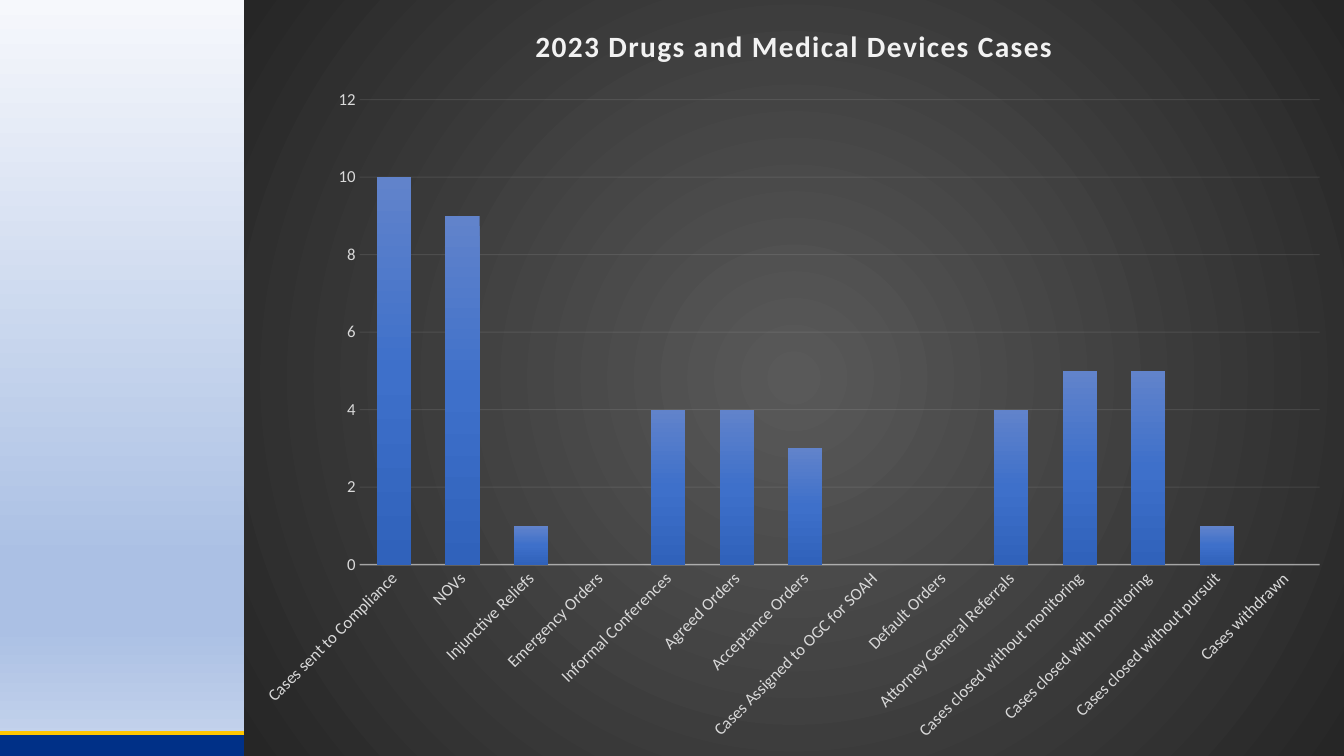
from lxml import etree
from pptx import Presentation
from pptx.chart.data import CategoryChartData
from pptx.dml.color import RGBColor
from pptx.enum import chart as charts, shapes
from pptx.oxml import ns, parse_xml
from pptx.util import Inches, Pt

CASES = {
    "Cases sent to Compliance": 10,
    "NOVs": 9,
    "Injunctive Reliefs": 1,
    "Emergency Orders": 0,
    "Informal Conferences": 4,
    "Agreed Orders": 4,
    "Acceptance Orders": 3,
    "Cases Assigned to OGC for SOAH": 0,
    "Default Orders": 0,
    "Attorney General Referrals": 4,
    "Cases closed without monitoring": 5,
    "Cases closed with monitoring": 5,
    "Cases closed without pursuit": 1,
    "Cases withdrawn": 0,
}
LINEAR = '<a:lin ang="5400000" scaled="0"/>'
RADIAL = ('<a:path path="circle">'
          '<a:fillToRect l="50000" t="50000" r="50000" b="50000"/></a:path>')


def color(value):
    return RGBColor.from_string(value)


def gradient(stops, direction=LINEAR):
    stop_xml = "".join(
        f'<a:gs pos="{position * 1000}"><a:srgbClr val="{value}"/></a:gs>'
        for position, value in stops)
    return parse_xml(f'<a:gradFill {ns.nsdecls("a")} rotWithShape="1">'
                     f'<a:gsLst>{stop_xml}</a:gsLst>{direction}</a:gradFill>')


class SlideBuilder:
    font_name = "Calibri"
    title_color = "F2F2F2"
    label_color = "D9D9D9"

    def __init__(self, slide):
        self.slide = slide

    def background(self, stops):
        self.slide.background.fill.gradient()
        old_fill = self.slide.element.find(".//" + ns.qn("a:gradFill"))
        old_fill.getparent().replace(old_fill, gradient(stops))

    def band(self, left, top, width, height, fill):
        shape = self.slide.shapes.add_shape(
            shapes.MSO_SHAPE.RECTANGLE,
            Inches(left), Inches(top), Inches(width), Inches(height))
        shape.shadow.inherit = False
        shape.fill.solid()
        shape.fill.fore_color.rgb = color(fill)
        shape.line.fill.background()

    def rule(self, left, top, width, line_color, weight):
        connector = self.slide.shapes.add_connector(
            shapes.MSO_CONNECTOR.STRAIGHT,
            Inches(left), Inches(top), Inches(left + width), Inches(top))
        connector.line.color.rgb = color(line_color)
        connector.line.width = Pt(weight)
        etree.SubElement(connector.element.spPr, ns.qn("a:effectLst"))

    def style_font(self, font, size, font_color):
        font.name = self.font_name
        font.size = Pt(size)
        font.color.rgb = color(font_color)

    def style_line(self, line, weight, opacity):
        line.width = Pt(weight)
        line.color.rgb = color(self.title_color)
        swatch = line.fill._xPr.find(".//" + ns.qn("a:srgbClr"))
        etree.SubElement(swatch, ns.qn("a:alpha"), val=str(opacity * 1000))

    def chart_title(self, chart, title):
        paragraph = chart.chart_title.text_frame.paragraphs[0]
        paragraph.text = title
        run = paragraph.runs[0]
        self.style_font(run.font, 21, self.title_color)
        run.font.bold = True
        run.font._element.set("spc", "100")
        chart.chart_title.include_in_layout = False

    def plot_layout(self, chart, left, top, width, height):
        plot_area = chart.element.find(".//" + ns.qn("c:plotArea"))
        for layout in plot_area.findall(ns.qn("c:layout")):
            plot_area.remove(layout)
        entries = [("layoutTarget", "inner"), ("xMode", "edge"), ("yMode", "edge"),
                   ("x", left), ("y", top), ("w", width), ("h", height)]
        body = "".join(f'<c:{tag} val="{value}"/>' for tag, value in entries)
        plot_area.insert(0, parse_xml(
            f'<c:layout {ns.nsdecls("c")}><c:manualLayout>{body}'
            '</c:manualLayout></c:layout>'))

    def chart_background(self, chart, stops):
        properties = parse_xml(f'<c:spPr {ns.nsdecls("c", "a")}/>')
        properties.append(gradient(stops, RADIAL))
        line = etree.SubElement(properties, ns.qn("a:ln"))
        etree.SubElement(line, ns.qn("a:noFill"))
        chart.element.find(ns.qn("c:chart")).addnext(properties)

    def axes(self, chart):
        for axis in (chart.category_axis, chart.value_axis):
            axis.major_tick_mark = charts.XL_TICK_MARK.NONE
            axis.minor_tick_mark = charts.XL_TICK_MARK.NONE
            self.style_font(axis.tick_labels.font, 12, self.label_color)
        self.style_line(chart.category_axis.format.line, 1, 54)
        chart.category_axis.has_major_gridlines = False
        label_body = chart.category_axis._element.find(
            ns.qn("c:txPr")).find(ns.qn("a:bodyPr"))
        label_body.set("rot", "-2700000")
        label_body.set("vert", "horz")
        value_axis = chart.value_axis
        value_axis.minimum_scale = 0
        value_axis.maximum_scale = 12
        value_axis.major_unit = 2
        value_axis.format.line.fill.background()
        self.style_line(value_axis.major_gridlines.format.line, 0.75, 10)

    def column_chart(self, left, top, width, height, title, values, bar_stops, back_stops):
        data = CategoryChartData()
        data.categories = list(values)
        data.add_series("Series 1", list(values.values()))
        chart = self.slide.shapes.add_chart(
            charts.XL_CHART_TYPE.COLUMN_CLUSTERED,
            Inches(left), Inches(top), Inches(width), Inches(height), data).chart
        self.style_font(chart.font, 10, "000000")
        chart.has_legend = False
        self.chart_title(chart, title)
        self.axes(chart)
        plot = chart.plots[0]
        plot.gap_width = 100
        plot.overlap = -24
        plot.vary_by_categories = False
        series = plot.series[0]
        series.invert_if_negative = False
        series.format.fill.gradient()
        old_fill = series._element.find(".//" + ns.qn("a:gradFill"))
        old_fill.getparent().replace(old_fill, gradient(bar_stops))
        self.plot_layout(chart, 0.105, 0.132, 0.873, 0.615)
        self.chart_background(chart, back_stops)


def main():
    presentation = Presentation()
    presentation.slide_width = Inches(13.33)
    presentation.slide_height = Inches(7.5)
    builder = SlideBuilder(presentation.slides.add_slide(presentation.slide_layouts[6]))
    builder.background([(0, "F6F8FC"), (74, "ABC0E4"), (83, "ABC0E4"), (100, "C7D5ED")])
    builder.band(0, 7.27, 2.42, 0.23, "003087")
    builder.rule(0, 7.27, 2.42, "FFC600", 3)
    builder.column_chart(
        2.42, 0, 10.91, 7.5, "2023 Drugs and Medical Devices Cases", CASES,
        [(0, "6183CB"), (50, "3E70CA"), (100, "3062BB")],
        [(0, "595959"), (100, "262626")])
    presentation.save("out.pptx")


if __name__ == "__main__":
    main()
